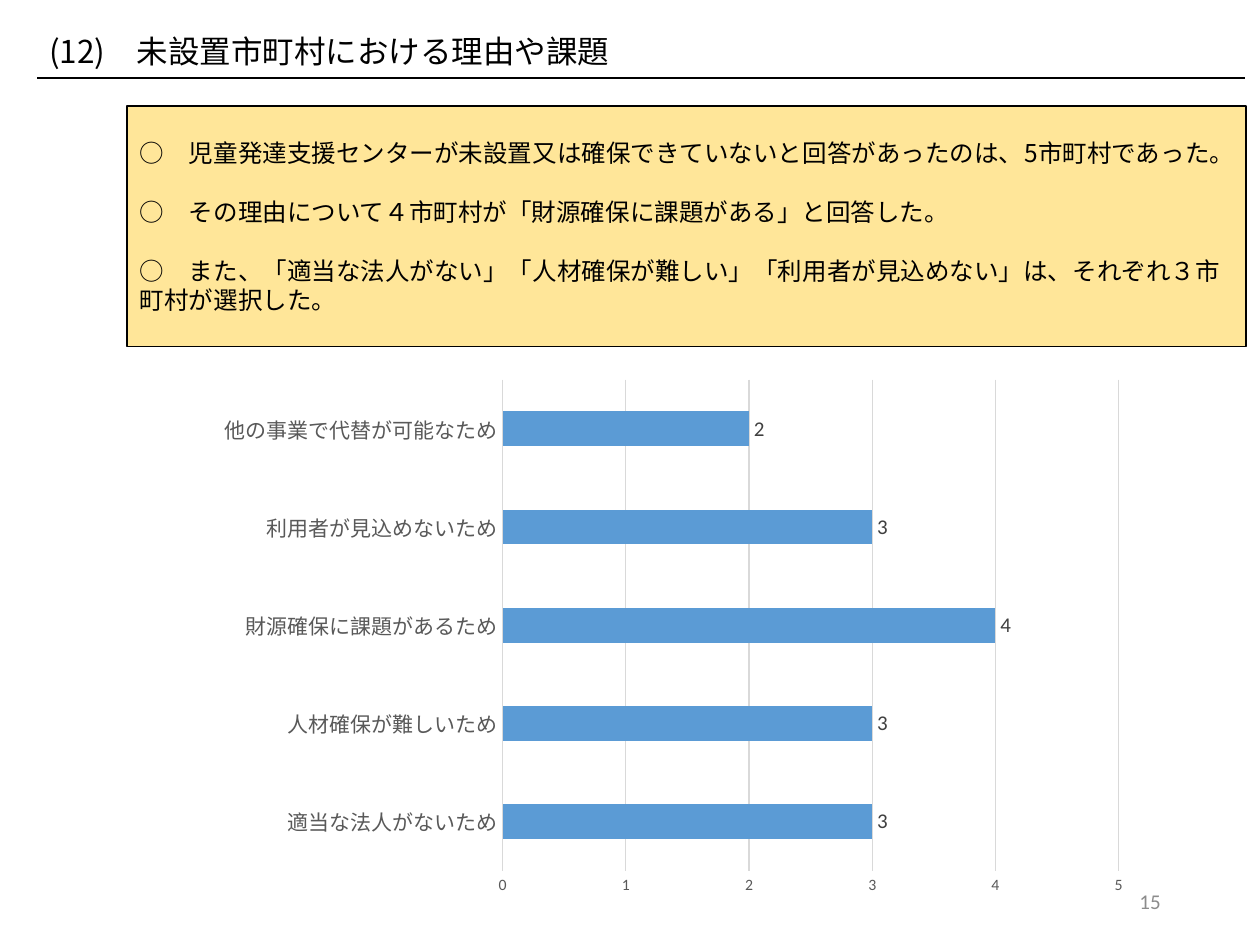
import pptx
import pptx.chart.data
import pptx.dml.color
import pptx.enum.chart
import pptx.enum.text
import pptx.oxml
import pptx.oxml.ns
import pptx.util

Inches = pptx.util.Inches
Pt = pptx.util.Pt
ANCHOR = pptx.enum.text.MSO_ANCHOR
ALIGN = pptx.enum.text.PP_ALIGN

COLORS = {
    "black": "000000",
    "box": "FFE699",
    "bar": "5B9BD5",
    "grid": "D9D9D9",
    "axis": "595959",
    "label": "404040",
    "page": "8C8C8C",
}
JAPANESE = "Noto Sans CJK JP"
LATIN = "Calibri"

TITLE = "(12)　未設置市町村における理由や課題"
FINDINGS = [
    "○　児童発達支援センターが未設置又は確保できていないと回答があったのは、5市町村であった。",
    "○　その理由について４市町村が「財源確保に課題がある」と回答した。",
    "○　また、「適当な法人がない」「人材確保が難しい」「利用者が見込めない」は、それぞれ３市町村が選択した。",
]
# Listed from the bottom bar to the top bar
REASONS = {
    "適当な法人がないため": 3,
    "人材確保が難しいため": 3,
    "財源確保に課題があるため": 4,
    "利用者が見込めないため": 3,
    "他の事業で代替が可能なため": 2,
}


def rgb(name):
    return pptx.dml.color.RGBColor.from_string(COLORS[name])


def format_font(font, size, color, name=LATIN):
    font.size = Pt(size)
    font.name = name
    font.color.rgb = rgb(color)


def format_line(line, color, width):
    line.color.rgb = rgb(color)
    line.width = Pt(width)


def write_text(paragraph, text, size=14, color="black", font=JAPANESE,
               align=ALIGN.LEFT, line_spacing=None, space_after=0):
    paragraph.alignment = align
    paragraph.space_before = Pt(0)
    paragraph.space_after = Pt(space_after)
    if line_spacing:
        paragraph.line_spacing = Pt(line_spacing)
    run = paragraph.add_run()
    run.text = text
    format_font(run.font, size, color, font)
    # East Asian characters need their own typeface entry
    east_asian = pptx.oxml.parse_xml(
        f'<a:ea {pptx.oxml.ns.nsdecls("a")} typeface="{JAPANESE}"/>')
    run.font._element.find(pptx.oxml.ns.qn("a:latin")).addnext(east_asian)


def remove_bullet(paragraph):
    properties = paragraph._p.get_or_add_pPr()
    properties.set("marL", "0")
    properties.set("indent", "0")
    properties.append(pptx.oxml.parse_xml(
        f'<a:buNone {pptx.oxml.ns.nsdecls("a")}/>'))


def add_title_table(slide):
    frame = slide.shapes.add_table(
        1, 1, Inches(0.29), Inches(0.17), Inches(9.6), Inches(0.45))
    table = frame.table
    table.first_row = False
    table.horz_banding = False
    cell = table.cell(0, 0)
    cell.margin_top = cell.margin_bottom = Inches(0.02)
    cell.vertical_anchor = ANCHOR.MIDDLE
    write_text(cell.text_frame.paragraphs[0], TITLE, size=18)
    # Rule under the title
    cell.fill.background()
    cell._tc.get_or_add_tcPr().insert(0, pptx.oxml.parse_xml(
        f'<a:lnB {pptx.oxml.ns.nsdecls("a")} w="{Pt(1)}"><a:solidFill>'
        f'<a:srgbClr val="{COLORS["black"]}"/></a:solidFill></a:lnB>'))


def fill_findings(box):
    box.left, box.top = Inches(1.01), Inches(0.84)
    box.width, box.height = Inches(8.88), Inches(1.91)
    box.fill.solid()
    box.fill.fore_color.rgb = rgb("box")
    format_line(box.line, "black", 1)
    text_frame = box.text_frame
    text_frame.word_wrap = True
    text_frame.auto_size = pptx.enum.text.MSO_AUTO_SIZE.NONE
    text_frame.vertical_anchor = ANCHOR.MIDDLE
    line_height = 16.8
    for index, finding in enumerate(FINDINGS):
        paragraph = text_frame.add_paragraph() if index else text_frame.paragraphs[0]
        is_last = index == len(FINDINGS) - 1
        write_text(paragraph, finding, line_spacing=line_height,
                   space_after=0 if is_last else line_height)
        remove_bullet(paragraph)


def set_plot_area(chart, x, y, width, height):
    values = {"x": x, "y": y, "w": width, "h": height}
    entries = "".join(f'<c:{key}Mode val="edge"/>' for key in "xy")
    entries += "".join(f'<c:{key} val="{value}"/>' for key, value in values.items())
    plot_area = chart._chartSpace.chart.plotArea
    for layout in plot_area.findall(pptx.oxml.ns.qn("c:layout")):
        plot_area.remove(layout)
    plot_area.insert(0, pptx.oxml.parse_xml(
        f'<c:layout {pptx.oxml.ns.nsdecls("c")}><c:manualLayout>'
        f'<c:layoutTarget val="inner"/>{entries}</c:manualLayout></c:layout>'))


def add_reason_chart(slide):
    data = pptx.chart.data.CategoryChartData()
    data.categories = list(REASONS)
    data.add_series("Series 1", list(REASONS.values()))
    chart = slide.shapes.add_chart(
        pptx.enum.chart.XL_CHART_TYPE.BAR_CLUSTERED,
        Inches(1), Inches(2.75), Inches(8.19), Inches(4.63), data).chart
    chart.has_title = False
    chart.has_legend = False
    format_font(chart.font, 10, "black")
    set_plot_area(chart, 0.365, 0.057, 0.597, 0.842)

    # Bars and their values
    plot = chart.plots[0]
    plot.gap_width = 182
    plot.vary_by_categories = False
    series = plot.series[0]
    series.format.fill.solid()
    series.format.fill.fore_color.rgb = rgb("bar")
    labels = series.data_labels
    labels.show_value = True
    labels.position = pptx.enum.chart.XL_LABEL_POSITION.OUTSIDE_END
    format_font(labels.font, 12, "label")

    # Axes
    for axis, size in ((chart.category_axis, 12), (chart.value_axis, 9)):
        axis.major_tick_mark = pptx.enum.chart.XL_TICK_MARK.NONE
        axis.minor_tick_mark = pptx.enum.chart.XL_TICK_MARK.NONE
        format_font(axis.tick_labels.font, size, "axis")
    format_line(chart.category_axis.format.line, "grid", 0.75)
    value_axis = chart.value_axis
    value_axis.minimum_scale = 0
    value_axis.maximum_scale = 5
    value_axis.major_unit = 1
    value_axis.format.line.fill.background()
    value_axis.has_major_gridlines = True
    format_line(value_axis.major_gridlines.format.line, "grid", 0.75)


def add_page_number(slide, number):
    box = slide.shapes.add_textbox(
        Inches(7.06), Inches(6.95), Inches(2.25), Inches(0.4))
    box.text_frame.word_wrap = True
    box.text_frame.vertical_anchor = ANCHOR.MIDDLE
    write_text(box.text_frame.paragraphs[0], number, size=12, color="page",
               font=LATIN, align=ALIGN.RIGHT)


def main():
    presentation = pptx.Presentation()
    presentation.slide_width = Inches(10)
    presentation.slide_height = Inches(7.5)
    slide = presentation.slides.add_slide(presentation.slide_layouts[1])

    # The title stands in a ruled table, so its placeholder is not needed
    title = slide.shapes.title._element
    title.getparent().remove(title)

    add_title_table(slide)
    add_reason_chart(slide)
    fill_findings(slide.placeholders[1])
    add_page_number(slide, "15")
    presentation.save("out.pptx")


if __name__ == "__main__":
    main()
